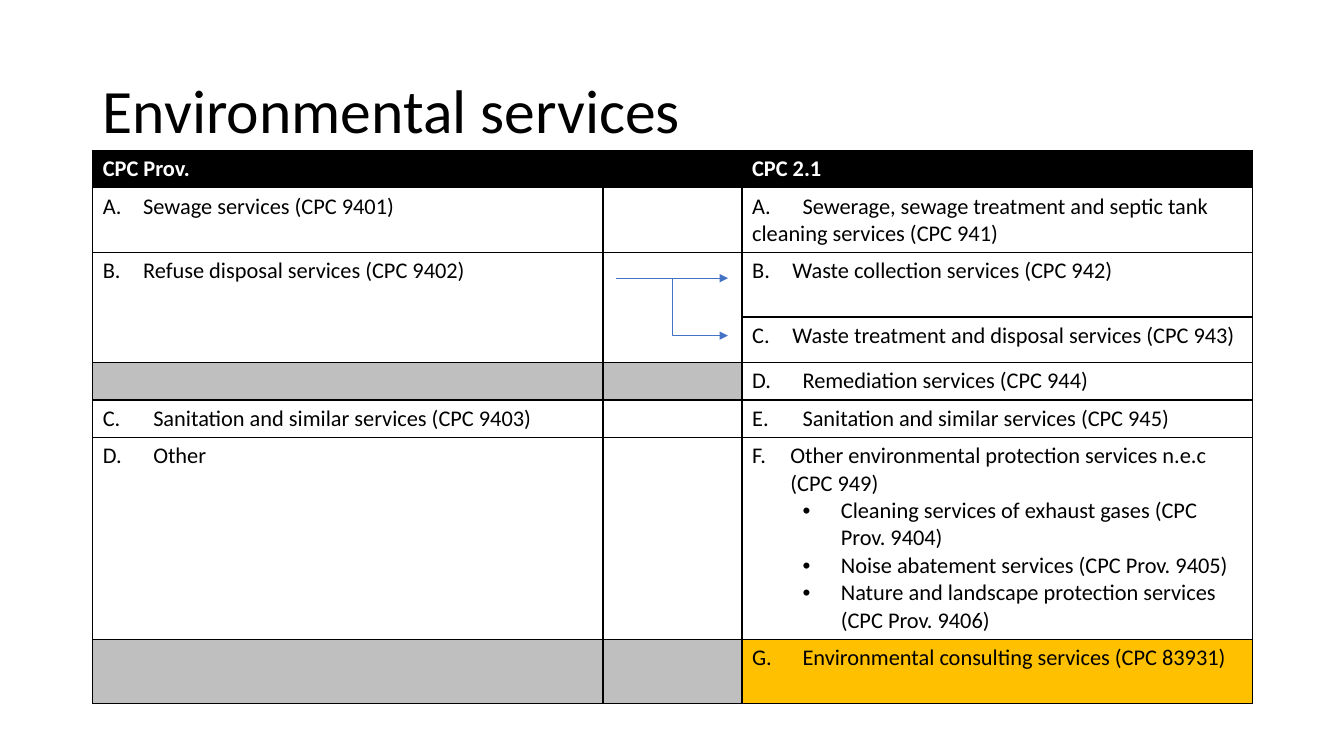
"""Build a slide that maps environmental services from CPC Prov. to CPC 2.1."""
from dataclasses import dataclass

from lxml.etree import SubElement as Sub
from pptx import Presentation
from pptx.dml.color import RGBColor
from pptx.enum.shapes import MSO_CONNECTOR as Conn
from pptx.enum.text import MSO_ANCHOR as Anchor, PP_ALIGN as Align
from pptx.oxml.ns import qn
from pptx.util import Inches, Pt

BLACK = RGBColor(0, 0, 0)
WHITE = RGBColor(255, 255, 255)
GREY = RGBColor(0xBF, 0xBF, 0xBF)
GOLD = RGBColor(0xFF, 0xC0, 0)
BLUE = RGBColor(0x44, 0x72, 0xC4)
FONT = "Calibri"


@dataclass
class Para:
    text: str
    tab: float = 0
    left: float = 0
    level: int = 0
    start: int = 0


@dataclass
class Row:
    height: float
    old: list[Para]
    new: list[Para]
    fills: tuple = (None, None, None)
    ink: RGBColor = BLACK


@dataclass
class Arrow:
    kind: Conn
    drop: float


ROWS = [
    Row(0.37, [Para("CPC Prov.")], [Para("CPC 2.1")], (BLACK,) * 3, WHITE),
    Row(0.64, [Para("A.\tSewage services (CPC 9401)", 0.4)],
        [Para("A.\tSewerage, sewage treatment and septic tank cleaning services (CPC 941)")]),
    Row(0.64, [Para("B.\tRefuse disposal services (CPC 9402)", 0.4)],
        [Para("B.\tWaste collection services (CPC 942)", 0.4)]),
    Row(0.45, [], [Para("C.\tWaste treatment and disposal services (CPC 943)", 0.4)]),
    Row(0.37, [], [Para("D.\tRemediation services (CPC 944)")], (GREY, GREY, None)),
    Row(0.37, [Para("C.\tSanitation and similar services (CPC 9403)")],
        [Para("E.\tSanitation and similar services (CPC 945)")]),
    Row(2.0, [Para("D.\tOther")], [
        Para("Other environmental protection services n.e.c (CPC 949)", 0.4, 0.38, start=6),
        Para("Cleaning services of exhaust gases (CPC Prov. 9404)", 0.4, 0.88, 1),
        Para("Noise abatement services (CPC Prov. 9405)", 0.4, 0.88, 1),
        Para("Nature and landscape protection services (CPC Prov. 9406)", 0.4, 0.88, 1)]),
    Row(0.64, [], [Para("G.\tEnvironmental consulting services (CPC 83931)")],
        (GREY, GREY, GOLD)),
]
COLS = (5.06, 1.38, 5.06)
ARROWS = [Arrow(Conn.ELBOW, 0.57), Arrow(Conn.STRAIGHT, 0)]


def style(par, size: float, ink: RGBColor, bold: bool = False) -> None:
    """Set the font of a paragraph."""
    font = par.font
    font.name, font.size, font.bold = FONT, Pt(size), bold
    font.color.rgb = ink


def indent(par, item: Para) -> None:
    """Set the indent, bullet and tab stop of a paragraph."""
    par.level = item.level
    props = par._p.get_or_add_pPr()
    if item.left:
        props.set("marL", str(Inches(item.left)))
        props.set("indent", str(Inches(-0.38)))
    if item.start:
        Sub(props, qn("a:buFont"), typeface="+mj-lt")
        Sub(props, qn("a:buAutoNum"), type="alphaUcPeriod", startAt=str(item.start))
    elif item.level:
        Sub(props, qn("a:buFont"), typeface="Arial")
        Sub(props, qn("a:buChar"), char="•")
    if item.tab:
        tabs = Sub(props, qn("a:tabLst"))
        Sub(tabs, qn("a:tab"), pos=str(Inches(item.tab)), algn="l")


def border(cell) -> None:
    """Draw a thin black line on each side of a cell."""
    props = cell._tc.get_or_add_tcPr()
    for side in "LRTB":
        line = Sub(props, qn(f"a:ln{side}"), w=str(Pt(1)))
        Sub(Sub(line, qn("a:solidFill")), qn("a:srgbClr"), val=str(BLACK))


def write(cell, items: list[Para], fill, ink: RGBColor) -> None:
    """Fill one cell with its paragraphs, borders and colour."""
    border(cell)
    if fill is None:
        cell.fill.background()
    else:
        cell.fill.solid()
        cell.fill.fore_color.rgb = fill
    frame = cell.text_frame
    for spot, item in enumerate(items or [Para("")]):
        par = frame.add_paragraph() if spot else frame.paragraphs[0]
        par.text = item.text
        indent(par, item)
        style(par, 16, ink, ink == WHITE)


def chart_rows(slide) -> None:
    """Add the table of services."""
    high = sum(row.height for row in ROWS)
    table = slide.shapes.add_table(len(ROWS), len(COLS), Inches(0.92), Inches(1.49),
                                   Inches(sum(COLS)), Inches(high)).table
    table.first_row = table.horz_banding = False
    for col, width in zip(table.columns, COLS):
        col.width = Inches(width)
    for r, row in enumerate(ROWS):
        table.rows[r].height = Inches(row.height)
        for c, items in enumerate((row.old, [], row.new)):
            write(table.cell(r, c), items, row.fills[c], row.ink)
    for c in (0, 1):
        table.cell(2, c).merge(table.cell(3, c))


def draw(slide, arrow: Arrow) -> None:
    """Add one arrow from the old class to a new one."""
    link = slide.shapes.add_connector(arrow.kind, Inches(6.11), Inches(2.76),
                                      Inches(7.22), Inches(2.76 + arrow.drop))
    link.line.color.rgb = BLUE
    link.line.width = Pt(0.5)
    Sub(link.line._get_or_add_ln(), qn("a:tailEnd"), type="triangle")
    Sub(link._element.spPr, qn("a:effectLst"))


def head(slide) -> None:
    """Place and format the title."""
    title = slide.shapes.title
    title.left, title.top = Inches(0.92), Inches(0.4)
    title.width, title.height = Inches(11.5), Inches(1.45)
    title.text_frame.text = "Environmental services"
    title.text_frame.vertical_anchor = Anchor.MIDDLE
    par = title.text_frame.paragraphs[0]
    par.alignment, par.line_spacing = Align.LEFT, 0.9
    style(par, 44, BLACK)


def main() -> None:
    """Build and save the slide."""
    deck = Presentation()
    deck.slide_width, deck.slide_height = Inches(13.33), Inches(7.5)
    slide = deck.slides.add_slide(deck.slide_layouts[5])
    head(slide)
    chart_rows(slide)
    for arrow in ARROWS:
        draw(slide, arrow)
    deck.save("out.pptx")


if __name__ == "__main__":
    main()
